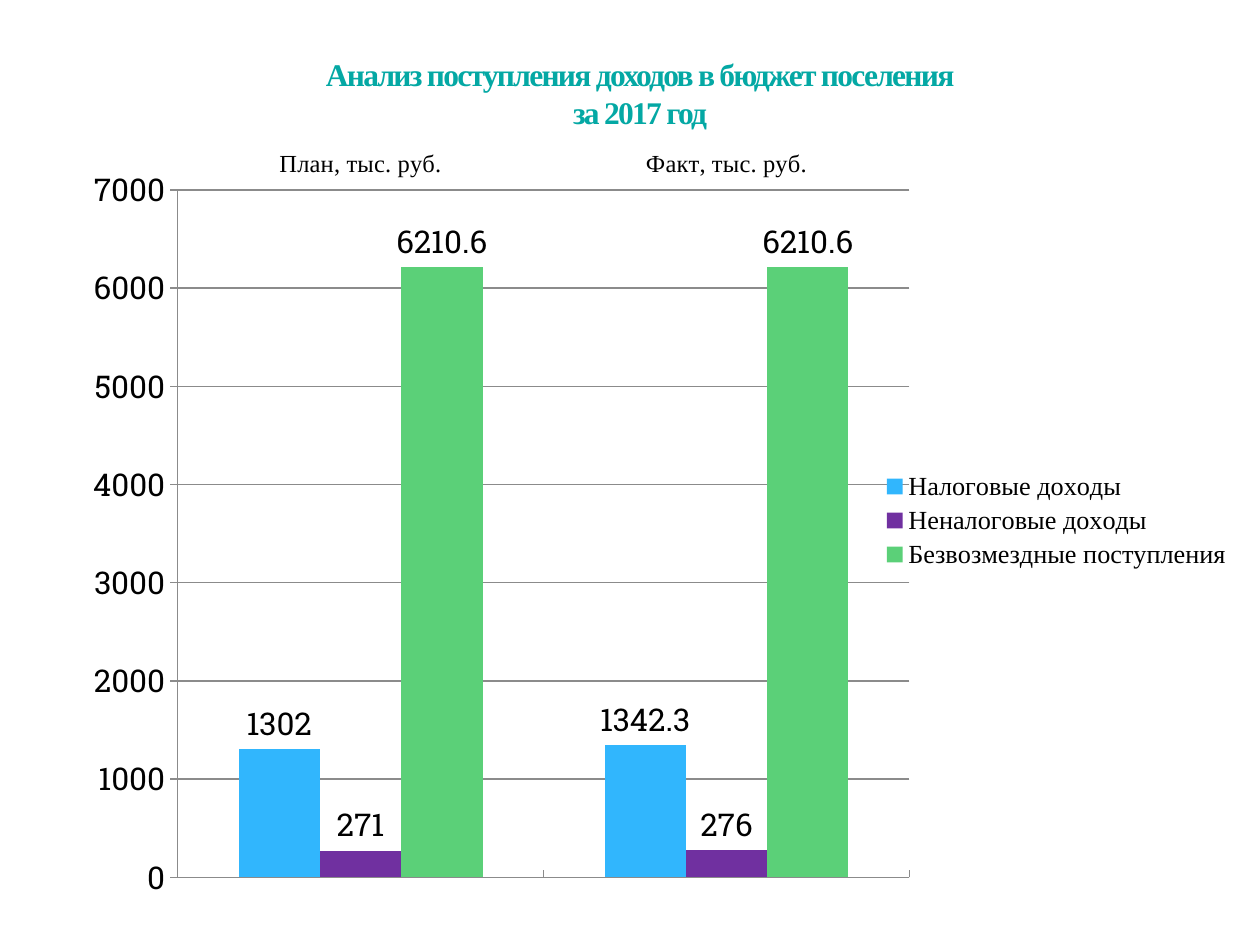
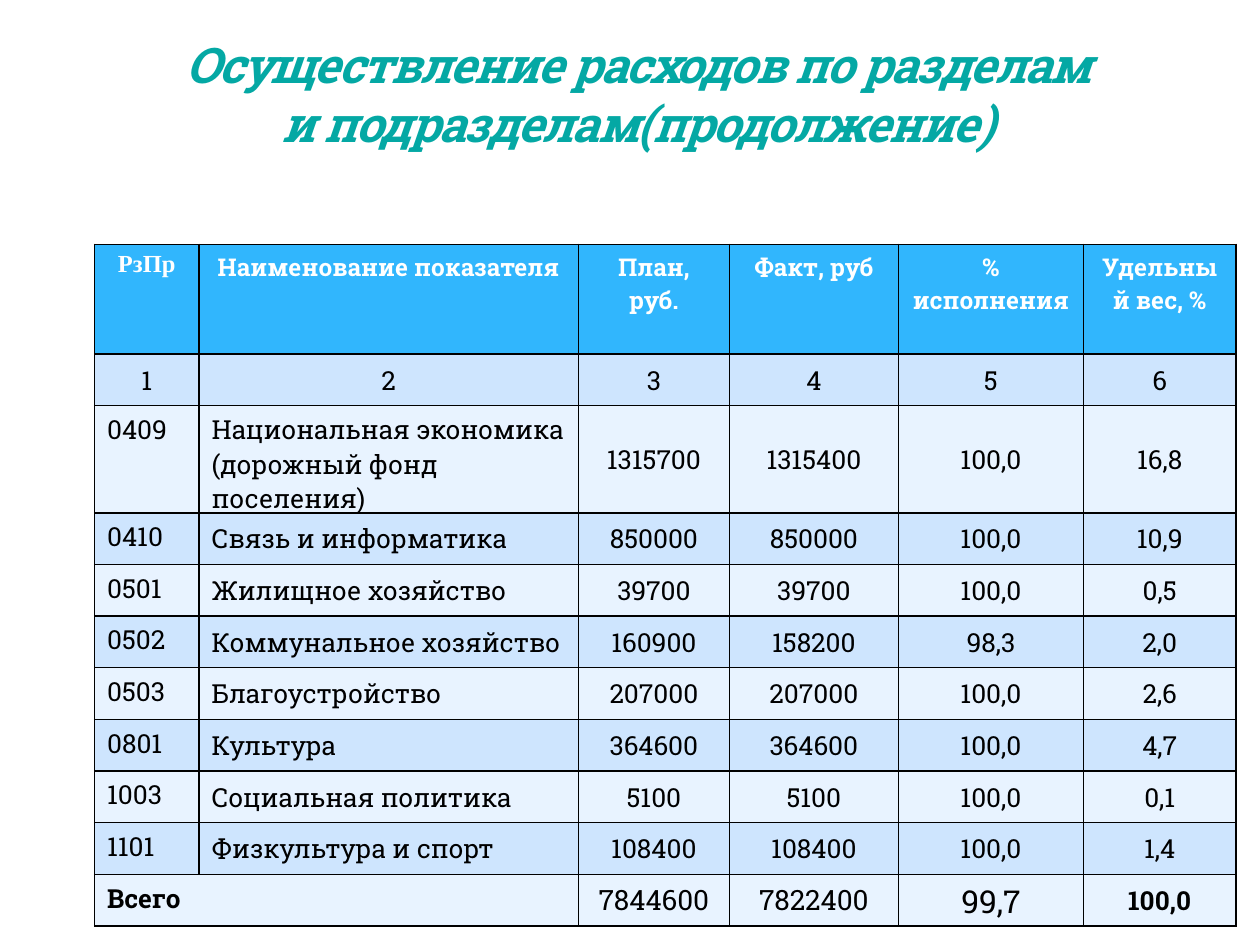
from lxml.etree import SubElement
from pptx import Presentation
from pptx.chart.data import CategoryChartData
from pptx.dml.color import RGBColor
from pptx.enum.chart import (XL_CHART_TYPE as ChartType, XL_LABEL_POSITION as LabelPosition,
                             XL_LEGEND_POSITION as LegendPosition, XL_TICK_LABEL_POSITION as TickLabels,
                             XL_TICK_MARK as TickMark)
from pptx.enum.text import MSO_ANCHOR as Anchor, PP_ALIGN as Align
from pptx.oxml import parse_xml
from pptx.oxml.ns import nsdecls, qn
from pptx.util import Inches, Pt

SLAB, TIMES = "Roboto Slab", "Times New Roman"
TEAL, BLUE, PURPLE, GREEN = "04A8A4", "31B6FD", "7030A0", "5BD078"
BLACK, WHITE, GRID_GREY = "000000", "FFFFFF", "8B8B8B"
BANDS = ("CEE5FE", "E8F3FF")

INCOME_TITLE = ["Анализ поступления доходов в бюджет поселения", "за 2017 год"]
INCOME_STAGES = ["План, тыс. руб.", "Факт, тыс. руб."]
INCOMES = [
    ("Налоговые доходы", (1302, 1342.3), BLUE),
    ("Неналоговые доходы", (271, 276), PURPLE),
    ("Безвозмездные поступления", (6210.6, 6210.6), GREEN),
]
PLOT_AREA = {"x": 0.096, "y": 0.06, "w": 0.62, "h": 0.915}

EXPENSE_TITLE = ["Осуществление расходов по разделам и подразделам(продолжение)"]
EXPENSES = [
    ("РзПр", "Наименование показателя", "План, руб.", "Факт, руб", "% исполнения", "Удельный вес, %"),
    ("1", "2", "3", "4", "5", "6"),
    ("0409", "Национальная экономика (дорожный фонд поселения)", "1315700", "1315400", "100,0", "16,8"),
    ("0410", "Связь и информатика", "850000", "850000", "100,0", "10,9"),
    ("0501", "Жилищное хозяйство", "39700", "39700", "100,0", "0,5"),
    ("0502", "Коммунальное хозяйство", "160900", "158200", "98,3", "2,0"),
    ("0503", "Благоустройство", "207000", "207000", "100,0", "2,6"),
    ("0801", "Культура", "364600", "364600", "100,0", "4,7"),
    ("1003", "Социальная политика", "5100", "5100", "100,0", "0,1"),
    ("1101", "Физкультура и спорт", "108400", "108400", "100,0", "1,4"),
    ("Всего", "", "7844600", "7822400", "99,7", "100,0"),
]
COLUMN_WIDTHS = (0.83, 3.01, 1.2, 1.34, 1.47, 1.21)
HEADER_HEIGHT, ROW_HEIGHT = 0.87, 0.41
TOTAL_SIZES = (15, 15, 16, 16, 18, 15)
TOTAL_BOLD_COLUMNS = (0, 5)


def color(hex_code):
    return RGBColor.from_string(hex_code)


def style(font, size, name, hex_code=BLACK, bold=False, italic=False):
    font.size, font.name, font.bold, font.italic = Pt(size), name, bold, italic
    font.color.rgb = color(hex_code)


def add_title(slide, lines, box, size, font_name, anchor, inset=0.0, italic=False):
    frame = slide.shapes.add_textbox(*map(Inches, box)).text_frame
    frame.word_wrap = True
    frame.vertical_anchor = anchor
    frame.margin_top = frame.margin_bottom = Inches(inset)
    frame.text = "\n".join(lines)
    for paragraph in frame.paragraphs:
        paragraph.alignment = Align.CENTER
        style(paragraph.font, size, font_name, TEAL, bold=True, italic=italic)
        for run in paragraph.runs:
            run._r.get_or_add_rPr().set("spc", "-100")


def place_plot(chart):
    """Fix the inner plot area as shares of the chart."""
    plot_area = chart._chartSpace.chart.plotArea
    for old in plot_area.findall(qn("c:layout")):
        plot_area.remove(old)
    layout = parse_xml(f"<c:layout {nsdecls('c')}><c:manualLayout/></c:layout>")
    settings = {"layoutTarget": "inner", "xMode": "edge", "yMode": "edge", **PLOT_AREA}
    for tag, value in settings.items():
        SubElement(layout[0], qn(f"c:{tag}")).set("val", str(value))
    plot_area.insert(0, layout)


def add_income_chart(slide):
    data = CategoryChartData()
    data.categories = INCOME_STAGES
    for name, values, _ in INCOMES:
        data.add_series(name, values)
    box = map(Inches, (0.51, 1.15, 9.37, 5.98))
    chart = slide.shapes.add_chart(ChartType.COLUMN_CLUSTERED, *box, data).chart
    style(chart.font, 18, SLAB)
    chart.has_title = False
    place_plot(chart)

    plot = chart.plots[0]
    plot.gap_width, plot.overlap, plot.vary_by_categories = 150, 0, False
    plot.has_data_labels = True
    plot.data_labels.show_value = True
    plot.data_labels.position = LabelPosition.OUTSIDE_END
    for series, (_, _, fill) in zip(plot.series, INCOMES):
        series.format.fill.solid()
        series.format.fill.fore_color.rgb = color(fill)

    stages, amounts = chart.category_axis, chart.value_axis
    stages.major_tick_mark, amounts.major_tick_mark = TickMark.INSIDE, TickMark.OUTSIDE
    stages.tick_label_position = TickLabels.HIGH
    style(stages.tick_labels.font, 14, TIMES)
    amounts.minimum_scale, amounts.maximum_scale, amounts.major_unit = 0, 7000, 1000
    amounts.has_major_gridlines = True
    for part in (stages, amounts, amounts.major_gridlines):
        part.format.line.color.rgb = color(GRID_GREY)
        part.format.line.width = Pt(0.75)

    chart.has_legend = True
    chart.legend.position = LegendPosition.RIGHT
    chart.legend.include_in_layout = False
    style(chart.legend.font, 15, TIMES)


def add_borders(cell):
    properties = cell._tc.get_or_add_tcPr()
    for index, side in enumerate(("lnL", "lnR", "lnT", "lnB")):
        properties.insert(index, parse_xml(
            f'<a:{side} {nsdecls("a")} w="12700"><a:solidFill>'
            f'<a:srgbClr val="{BLACK}"/></a:solidFill></a:{side}>'))


def style_cell(cell, row, column):
    header, numbering, total = row == 0, row == 1, row == len(EXPENSES) - 1
    cell.fill.solid()
    cell.fill.fore_color.rgb = color(BLUE if header else BANDS[(row - 1) % 2])
    add_borders(cell)
    at_top = header or (column == 0 and not numbering)
    cell.vertical_anchor = Anchor.TOP if at_top else Anchor.MIDDLE
    paragraph = cell.text_frame.paragraphs[0]
    paragraph.alignment = Align.CENTER if header or numbering or column > 1 else Align.LEFT
    if header:
        style(paragraph.font, 14, SLAB if column else TIMES, WHITE, bold=True)
    else:
        style(paragraph.font, TOTAL_SIZES[column] if total else 15, SLAB,
              bold=total and column in TOTAL_BOLD_COLUMNS)


def add_expense_table(slide):
    heights = [HEADER_HEIGHT] + [ROW_HEIGHT] * (len(EXPENSES) - 1)
    box = map(Inches, (0.75, 1.94, sum(COLUMN_WIDTHS), sum(heights)))
    table = slide.shapes.add_table(len(EXPENSES), len(COLUMN_WIDTHS), *box).table
    for column, width in zip(table.columns, COLUMN_WIDTHS):
        column.width = Inches(width)
    for row, height in zip(table.rows, heights):
        row.height = Inches(height)
    for r, texts in enumerate(EXPENSES):
        for c, text in enumerate(texts):
            cell = table.cell(r, c)
            cell.text = text
            style_cell(cell, r, c)
    last = len(EXPENSES) - 1
    table.cell(last, 0).merge(table.cell(last, 1))


def main():
    deck = Presentation()
    deck.slide_width, deck.slide_height = Inches(10), Inches(7.5)
    blank = deck.slide_layouts[6]

    income = deck.slides.add_slide(blank)
    add_income_chart(income)
    add_title(income, INCOME_TITLE, (1.14, 0.44, 7.88, 0.87), 18, TIMES, Anchor.TOP)

    expenses = deck.slides.add_slide(blank)
    add_expense_table(expenses)
    add_title(expenses, EXPENSE_TITLE, (1.22, 0.26, 7.68, 1), 28, SLAB, Anchor.BOTTOM,
              inset=0.05, italic=True)
    deck.save("out.pptx")


if __name__ == "__main__":
    main()
